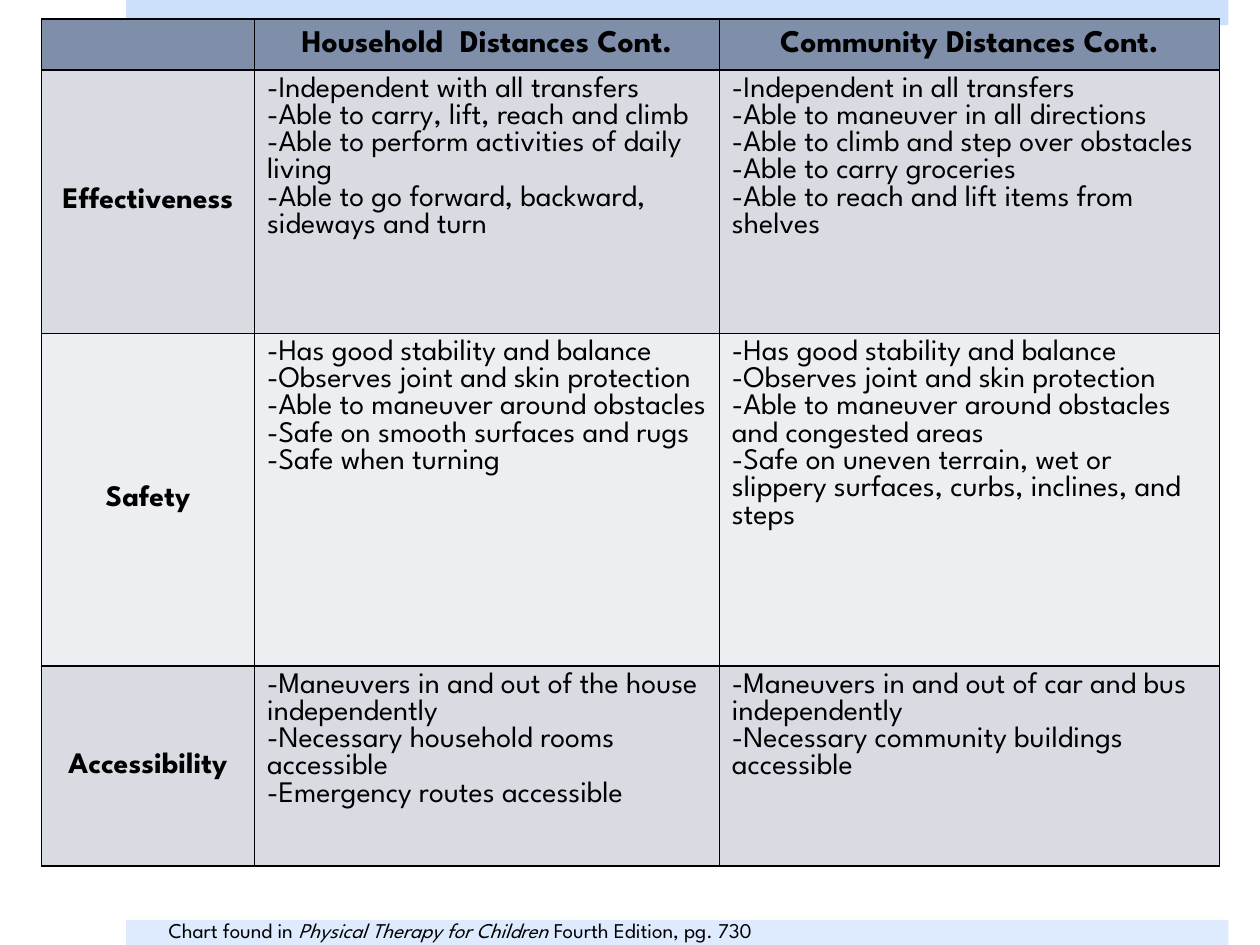
from lxml.etree import SubElement as Sub
from pptx import Presentation
from pptx.dml.color import RGBColor as Rgb
from pptx.enum.shapes import MSO_SHAPE as Kind
from pptx.enum.text import MSO_ANCHOR as Anchor, PP_ALIGN as Align
from pptx.oxml.ns import qn
from pptx.util import Inches, Pt

WIDE, HIGH = 10, 7.5
FONT = "League Spartan"
HUES = {"ink": "000000", "head": "7F8FA9", "dark": "D8DBE2", "light": "ECEEF1",
        "top": "CDE0FB", "foot": "DEEAFD"}
COLS = [1.69, 3.69, 3.97]
ROWS = [0.33, 2.09, 2.64, 1.59]
HEADS = ["", "Household  Distances Cont.", "Community Distances Cont."]
BODY = [
    ("Effectiveness",
     ["Independent with all transfers",
      "Able to carry, lift, reach and climb",
      "Able to perform activities of daily living",
      "Able to go forward, backward, sideways and turn"],
     ["Independent in all transfers",
      "Able to maneuver in all directions",
      "Able to climb and step over obstacles",
      "Able to carry groceries",
      "Able to reach and lift items from shelves"]),
    ("Safety",
     ["Has good stability and balance",
      "Observes joint and skin protection",
      "Able to maneuver around obstacles",
      "Safe on smooth surfaces and rugs",
      "Safe when turning"],
     ["Has good stability and balance",
      "Observes joint and skin protection",
      "Able to maneuver around obstacles and congested areas",
      "Safe on uneven terrain, wet or slippery surfaces, curbs, inclines, and steps"]),
    ("Accessibility",
     ["Maneuvers in and out of the house independently",
      "Necessary household rooms accessible",
      "Emergency routes accessible"],
     ["Maneuvers in and out of car and bus independently",
      "Necessary community buildings accessible"]),
]


def hue(name):
    return Rgb.from_string(HUES[name])


def add_run(para, text, size, bold=False, slant=False):
    run = para.add_run()
    run.text = text
    font = run.font
    font.name, font.size, font.bold, font.italic = FONT, Pt(size), bold, slant
    font.color.rgb = hue("ink")


def add_band(slide, box, name):
    band = slide.shapes.add_shape(Kind.RECTANGLE, *map(Inches, box))
    band.shadow.inherit = False
    band.fill.solid()
    band.fill.fore_color.rgb = hue(name)
    band.line.fill.background()


def edge_cell(cell):
    """Draw a one-point line on all four sides; call before filling."""
    props = cell._tc.get_or_add_tcPr()
    for side in ("lnL", "lnR", "lnT", "lnB"):
        line = Sub(props, qn("a:" + side), w=str(Pt(1)))
        Sub(Sub(line, qn("a:solidFill")), qn("a:srgbClr"), val=HUES["ink"])


def fill_cell(cell, lines, size, name, label):
    """Write one paragraph per line; a label is bold and centred."""
    edge_cell(cell)
    cell.fill.solid()
    cell.fill.fore_color.rgb = hue(name)
    cell.vertical_anchor = Anchor.MIDDLE if label else Anchor.TOP
    frame = cell.text_frame
    for num, line in enumerate(lines):
        para = frame.add_paragraph() if num else frame.paragraphs[0]
        para.alignment = Align.CENTER if label else Align.LEFT
        if line:
            add_run(para, line if label else "-" + line, size, bold=label)


def add_grid(slide, left, top):
    box = map(Inches, (left, top, sum(COLS), sum(ROWS)))
    grid = slide.shapes.add_table(len(ROWS), len(COLS), *box).table
    for col, width in zip(grid.columns, COLS):
        col.width = Inches(width)
    for row, height in zip(grid.rows, ROWS):
        row.height = Inches(height)
    for col, head in enumerate(HEADS):
        fill_cell(grid.cell(0, col), [head], 18, "head", True)
    for row, (label, *lists) in enumerate(BODY, 1):
        name = "dark" if row % 2 else "light"
        fill_cell(grid.cell(row, 0), [label], 17, name, True)
        for col, lines in enumerate(lists, 1):
            fill_cell(grid.cell(row, col), lines, 17, name, False)


def add_source(slide, box):
    frame = slide.shapes.add_textbox(*map(Inches, box)).text_frame
    frame.word_wrap = True
    para = frame.paragraphs[0]
    para.alignment = Align.JUSTIFY
    add_run(para, "Chart found in ", 12)
    add_run(para, "Physical Therapy for Children ", 12, slant=True)
    add_run(para, "Fourth Edition, pg. 730", 12)


def main():
    deck = Presentation()
    deck.slide_width, deck.slide_height = Inches(WIDE), Inches(HIGH)
    slide = deck.slides.add_slide(deck.slide_layouts[6])
    left, width, thick = WIDE / 10, WIDE * 0.875, 0.2
    add_band(slide, (left, 0, width, thick), "top")
    add_band(slide, (left, HIGH - thick, width, thick), "foot")
    add_grid(slide, 0.33, 0.15)
    add_source(slide, (1.24, 7.23, 5.6, 0.3))
    deck.save("out.pptx")


if __name__ == "__main__":
    main()
